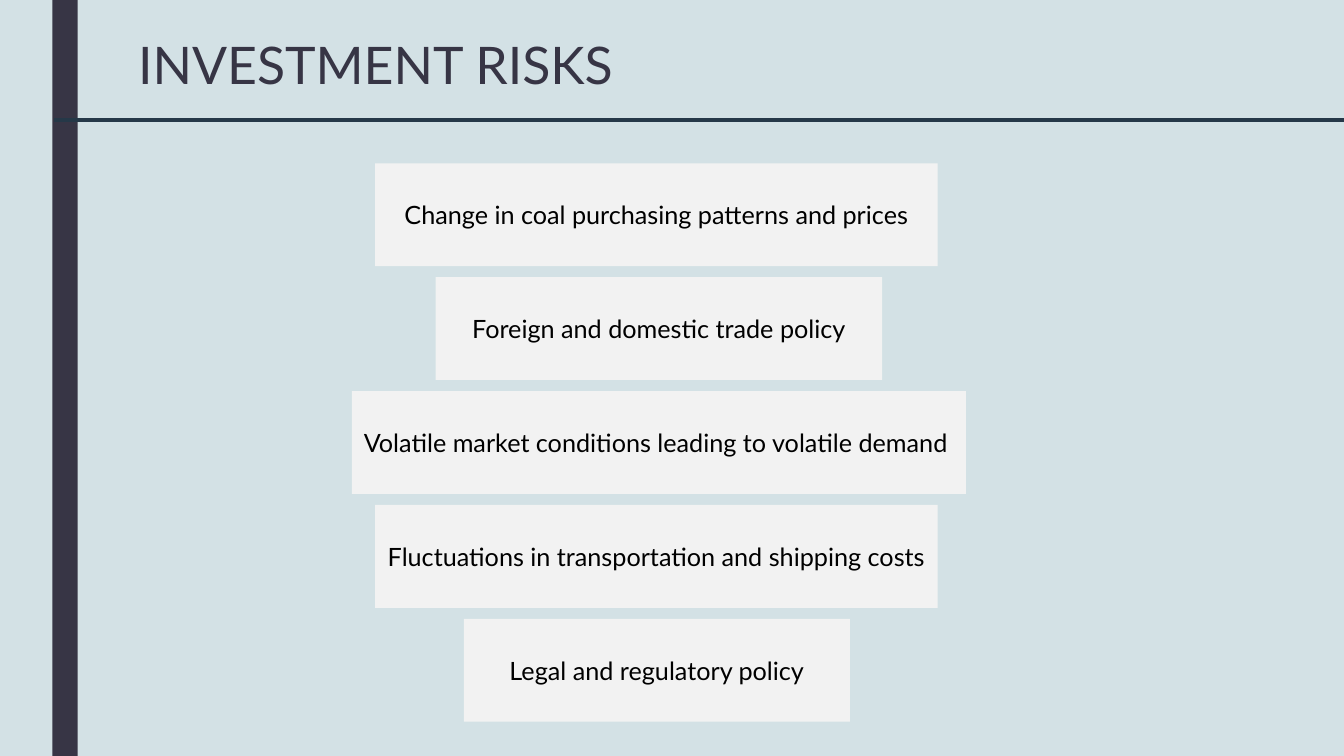
from pptx import Presentation
from pptx import util as u
from pptx.dml.color import RGBColor
from pptx.enum import shapes, text
from lxml import etree

PX = 9144
COLORS = {
    "background": "D3E1E5",
    "bar": "373545",
    "box": "F2F2F2",
    "rule": "253848",
    "text": "000000",
}
FONT = "Lato"
BOX_TOP, BOX_PITCH, BOX_HEIGHT = 162, 113, 102
RISKS = [
    ("Change in coal purchasing patterns and prices", 372, 558),
    ("Foreign and domestic trade policy", 432, 443),
    ("Volatile market conditions leading to volatile demand ", 349, 609),
    ("Fluctuations in transportation and shipping costs", 372, 558),
    ("Legal and regulatory policy", 460, 383),
]


def px(value):
    return u.Emu(value * PX)


def color(name):
    return RGBColor.from_string(COLORS[name])


def apply(target, values):
    for name, value in values.items():
        setattr(target, name, value)


def write(shape, words, size, color_name, frame_format, paragraph_format):
    frame = shape.text_frame
    apply(frame, {"word_wrap": True, **frame_format})
    paragraph = frame.paragraphs[0]
    apply(paragraph, paragraph_format)
    run = paragraph.add_run()
    run.text = words
    apply(run.font, {"name": FONT, "size": u.Pt(size)})
    run.font.color.rgb = color(color_name)


def add_rectangle(slide, left, top, width, height, fill):
    shape = slide.shapes.add_shape(
        shapes.MSO_SHAPE.RECTANGLE, px(left), px(top), px(width), px(height)
    )
    shape.shadow.inherit = False
    shape.fill.solid()
    shape.fill.fore_color.rgb = color(fill)
    shape.line.fill.background()
    return shape


def add_title(slide, words):
    title = slide.shapes.title
    apply(title, {"left": px(127), "top": px(35), "width": px(1050), "height": px(162)})
    write(
        title, words, 37, "bar",
        {"vertical_anchor": text.MSO_ANCHOR.TOP, "auto_size": text.MSO_AUTO_SIZE.NONE},
        {"alignment": text.PP_ALIGN.LEFT, "line_spacing": 0.89},
    )


def add_risk(slide, row, words, left, width):
    box = add_rectangle(
        slide, left, BOX_TOP + row * BOX_PITCH, width, BOX_HEIGHT, "box"
    )
    write(
        box, words, 18, "text",
        {"vertical_anchor": text.MSO_ANCHOR.MIDDLE},
        {"alignment": text.PP_ALIGN.CENTER},
    )


def add_rule(slide, left, right, top):
    rule = slide.shapes.add_connector(
        shapes.MSO_CONNECTOR.STRAIGHT, px(left), px(top), px(right), px(top)
    )
    rule.line.color.rgb = color("rule")
    rule.line.width = u.Pt(3)
    properties = rule._element.spPr
    namespace = properties.nsmap["a"]
    etree.SubElement(properties, f"{{{namespace}}}effectLst")


def main():
    presentation = Presentation()
    apply(presentation, {"slide_width": px(1333), "slide_height": px(750)})
    slide = presentation.slides.add_slide(presentation.slide_layouts[5])
    slide.background.fill.solid()
    slide.background.fill.fore_color.rgb = color("background")

    add_rectangle(slide, 52, 0, 25, 750, "bar")
    add_title(slide, "INVESTMENT RISKS")
    for row, (words, left, width) in enumerate(RISKS):
        add_risk(slide, row, words, left, width)
    add_rule(slide, 54, 1333, 119)

    presentation.save("out.pptx")


if __name__ == "__main__":
    main()
